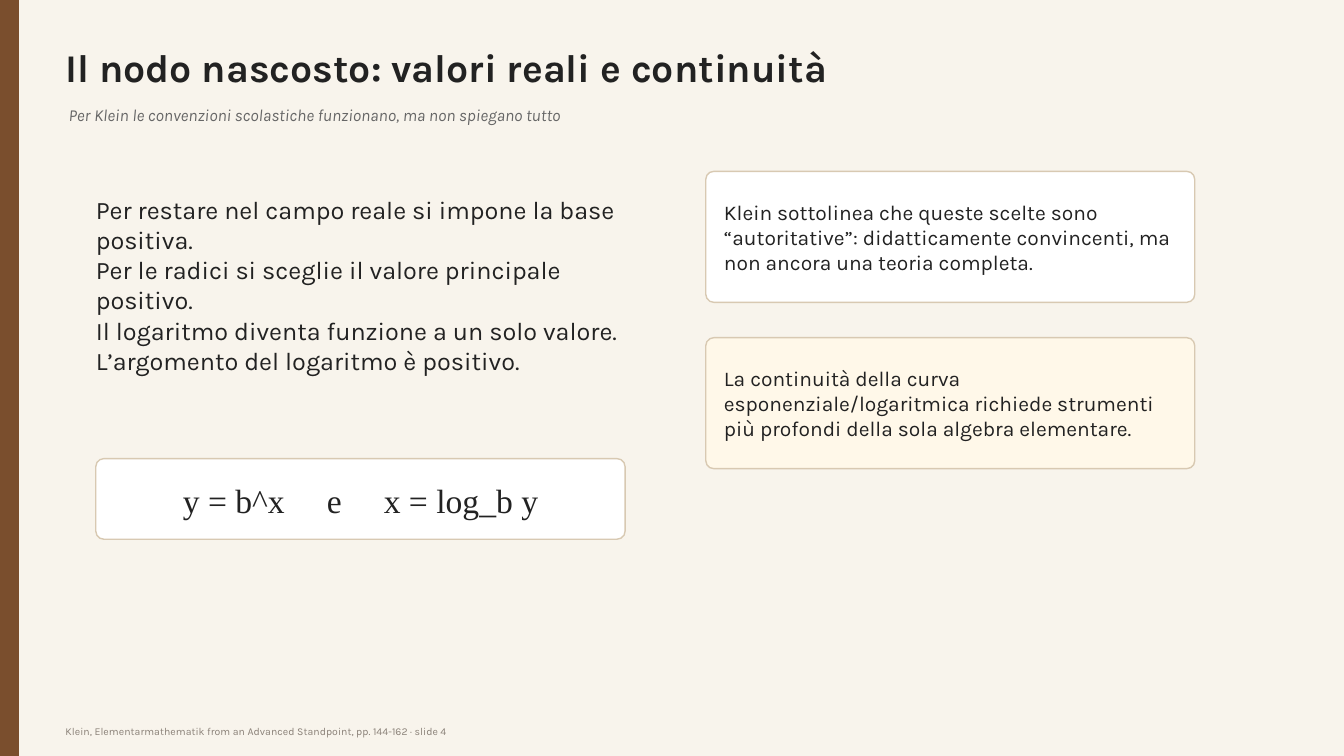
import pptx
import pptx.dml.color
import pptx.enum.shapes
import pptx.enum.text
import pptx.oxml
import pptx.util
from pptx.util import Inches

SHAPES = pptx.enum.shapes.MSO_SHAPE
ALIGN = pptx.enum.text.PP_ALIGN


def color(hex_code):
    return pptx.dml.color.RGBColor.from_string(hex_code)


def add_span(para, text, size=18, ink="222222", font="Karla",
             bold=False, italic=False, spacing=0):
    """Add formatted text; spacing is the extra width per character in points."""
    span = para.add_run()
    span.text = text
    span.font.size = pptx.util.Pt(size)
    span.font.name = font
    span.font.bold = bold
    span.font.italic = italic
    span.font.color.rgb = color(ink)
    if spacing:
        span.font._element.set("spc", str(spacing * 100))


class SlideBuilder:
    paper = "F8F4EC"
    accent = "7A4E2D"
    border = "D8C9B2"
    corner = 0.08

    def __init__(self, deck):
        self.page = deck.slides.add_slide(deck.slide_layouts[1])
        self.page.background.fill.solid()
        self.page.background.fill.fore_color.rgb = color(self.paper)

    def shape(self, kind, left, top, width, height, fill, line):
        shape = self.page.shapes.add_shape(
            kind, Inches(left), Inches(top), Inches(width), Inches(height))
        shape.shadow.inherit = False
        shape.fill.solid()
        shape.fill.fore_color.rgb = color(fill)
        shape.line.color.rgb = color(line)
        shape.line.width = pptx.util.Pt(1)
        return shape

    def panel(self, left, top, width, height, fill="FFFFFF"):
        panel = self.shape(SHAPES.ROUNDED_RECTANGLE, left, top, width, height,
                           fill, self.border)
        panel.adjustments[0] = self.corner / height

    def prepare(self, box, left, top, width, height):
        """Place a text holder and return its frame without margins."""
        box.left, box.top = Inches(left), Inches(top)
        box.width, box.height = Inches(width), Inches(height)
        frame = box.text_frame
        frame.word_wrap = True
        frame.auto_size = pptx.enum.text.MSO_AUTO_SIZE.NONE
        frame.vertical_anchor = pptx.enum.text.MSO_ANCHOR.MIDDLE
        frame.margin_left = frame.margin_right = 0
        frame.margin_top = frame.margin_bottom = 0
        return frame

    def text_box(self, left, top, width, height):
        box = self.page.shapes.add_textbox(0, 0, 0, 0)
        return self.prepare(box, left, top, width, height).paragraphs[0]

    def text(self, text, *place, **style):
        add_span(self.text_box(*place), text, **style)

    def title(self, text, *place):
        para = self.prepare(self.page.shapes.title, *place).paragraphs[0]
        para.alignment = ALIGN.LEFT
        add_span(para, text, size=28, bold=True)

    def body(self, lines, *place):
        frame = self.prepare(self.page.placeholders[1], *place)
        for index, line in enumerate(lines):
            para = frame.add_paragraph() if index else frame.paragraphs[0]
            settings = para._p.get_or_add_pPr()
            settings.set("marL", "0")
            settings.set("indent", "0")
            settings.append(pptx.oxml.parse_xml(
                '<a:buNone xmlns:a="http://schemas.openxmlformats.org/'
                'drawingml/2006/main"/>'))
            para.space_before = pptx.util.Pt(0)
            add_span(para, line)

    def formula(self, parts, *place):
        """Write centred parts with a wide space between them."""
        para = self.text_box(*place)
        para.alignment = ALIGN.CENTER
        style = {"size": 24, "font": "Times New Roman"}
        for index, part in enumerate(parts):
            if index:
                add_span(para, " ", spacing=24, **style)
            add_span(para, part, **style)


def main():
    deck = pptx.Presentation()
    deck.slide_width, deck.slide_height = Inches(13.33), Inches(7.5)
    slide = SlideBuilder(deck)

    slide.shape(SHAPES.RECTANGLE, 0, 0, 0.18, 7.5, slide.accent, slide.accent)
    slide.title("Il nodo nascosto: valori reali e continuità",
                0.65, 0.35, 10.6, 0.62)
    slide.text("Per Klein le convenzioni scolastiche funzionano, ma non spiegano tutto",
               0.68, 0.97, 10.2, 0.33, size=12, ink="666666", italic=True)
    slide.body(["Per restare nel campo reale si impone la base positiva.",
                "Per le radici si sceglie il valore principale positivo.",
                "Il logaritmo diventa funzione a un solo valore.",
                "L’argomento del logaritmo è positivo."],
               0.95, 1.55, 5.25, 2.55)

    slide.panel(0.95, 4.55, 5.25, 0.8)
    slide.formula(["y = b^x", "e", "x = log_b y"], 1.05, 4.71, 5.05, 0.5)

    notes = [
        ("FFFFFF", "Klein sottolinea che queste scelte sono “autoritative”: "
                   "didatticamente convincenti, ma non ancora una teoria completa."),
        ("FFF8E9", "La continuità della curva esponenziale/logaritmica richiede "
                   "strumenti più profondi della sola algebra elementare."),
    ]
    for row, (fill, note) in enumerate(notes):
        top = 1.7 + 1.65 * row
        slide.panel(7, top, 4.85, 1.3, fill)
        slide.text(note, 7.18, top + 0.15, 4.49, 1, size=15)

    slide.text("Klein, Elementarmathematik from an Advanced Standpoint, "
               "pp. 144-162 · slide 4",
               0.65, 7.16, 9.5, 0.18, size=7.5, ink="8A8178")
    deck.save("out.pptx")


if __name__ == "__main__":
    main()
